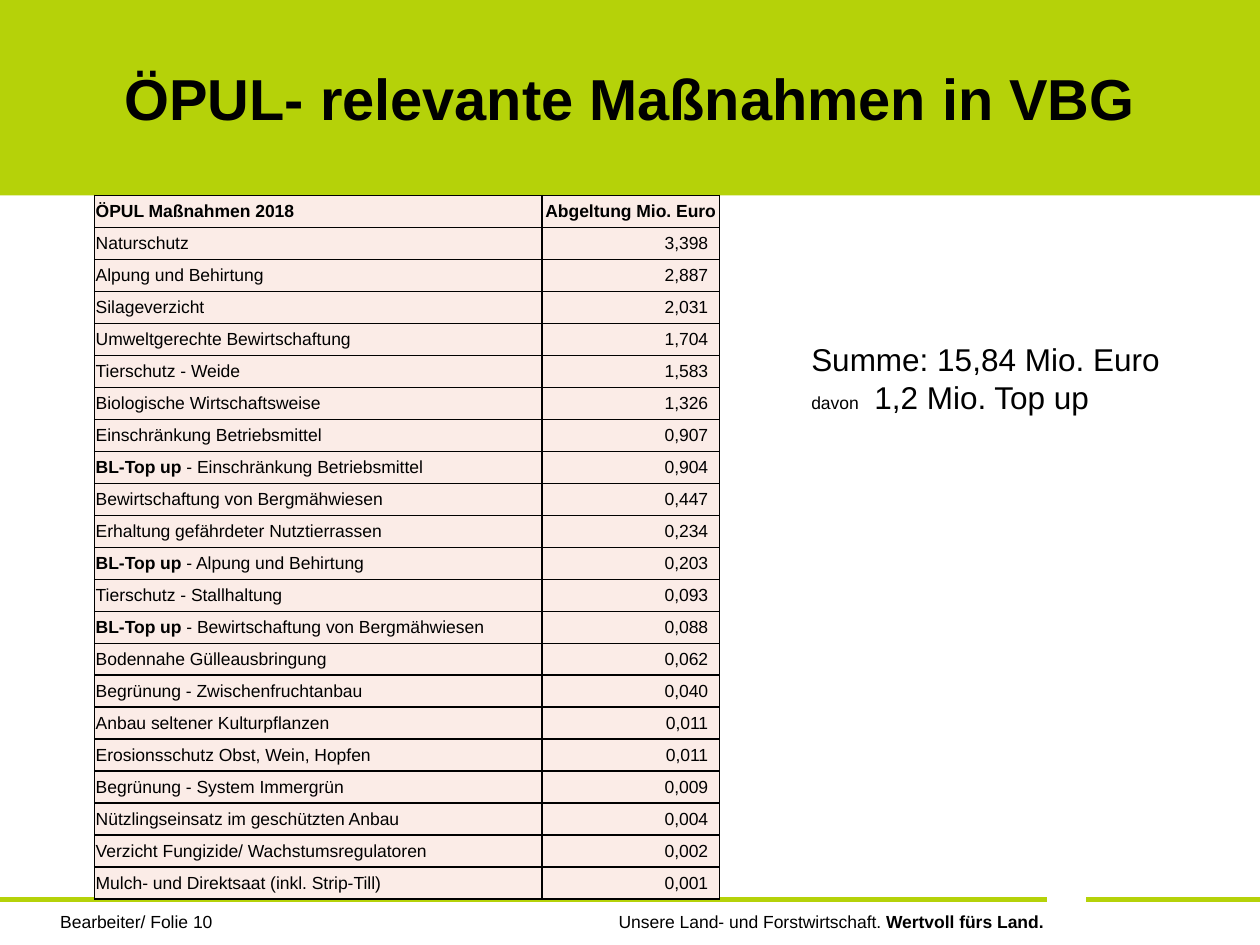
from dataclasses import dataclass

from lxml.etree import SubElement
from pptx import Presentation
from pptx.dml.color import RGBColor
from pptx.enum.shapes import MSO_CONNECTOR, MSO_SHAPE
from pptx.enum.text import MSO_ANCHOR, PP_ALIGN
from pptx.oxml.ns import qn
from pptx.slide import Slide
from pptx.util import Inches, Pt

TOP_UP = "BL-Top up "
HEADER = ("ÖPUL Maßnahmen 2018", "Abgeltung Mio. Euro")
MEASURES = [
    ("Naturschutz", "3,398"),
    ("Alpung und Behirtung", "2,887"),
    ("Silageverzicht", "2,031"),
    ("Umweltgerechte Bewirtschaftung", "1,704"),
    ("Tierschutz - Weide", "1,583"),
    ("Biologische Wirtschaftsweise", "1,326"),
    ("Einschränkung Betriebsmittel", "0,907"),
    (TOP_UP + "- Einschränkung Betriebsmittel", "0,904"),
    ("Bewirtschaftung von Bergmähwiesen", "0,447"),
    ("Erhaltung gefährdeter Nutztierrassen", "0,234"),
    (TOP_UP + "- Alpung und Behirtung", "0,203"),
    ("Tierschutz - Stallhaltung", "0,093"),
    (TOP_UP + "- Bewirtschaftung von Bergmähwiesen", "0,088"),
    ("Bodennahe Gülleausbringung", "0,062"),
    ("Begrünung - Zwischenfruchtanbau", "0,040"),
    ("Anbau seltener Kulturpflanzen", "0,011"),
    ("Erosionsschutz Obst, Wein, Hopfen", "0,011"),
    ("Begrünung - System Immergrün", "0,009"),
    ("Nützlingseinsatz im geschützten Anbau", "0,004"),
    ("Verzicht Fungizide/ Wachstumsregulatoren", "0,002"),
    ("Mulch- und Direktsaat (inkl. Strip-Till)", "0,001"),
]


def color(value):
    return RGBColor.from_string(value)


def measure_spans(name):
    if name.startswith(TOP_UP):
        return [(TOP_UP, 10, True), (name.removeprefix(TOP_UP), 10, False)]
    return [(name, 10, False)]


@dataclass
class SlideBuilder:
    page: Slide
    font: str = "Arial"
    ink: str = "000000"
    green: str = "B5D209"
    cell_fill: str = "FBECE7"

    def add_paragraphs(self, frame, paragraphs, align=PP_ALIGN.LEFT):
        for index, spans in enumerate(paragraphs):
            para = frame.add_paragraph() if index else frame.paragraphs[0]
            para.alignment = align
            for text, size, bold in spans:
                span = para.add_run()
                span.text = text
                span.font.name = self.font
                span.font.size = Pt(size)
                span.font.bold = bold
                span.font.color.rgb = color(self.ink)

    def text(self, left, top, width, height, paragraphs, align=PP_ALIGN.LEFT, wrap=True):
        box = self.page.shapes.add_textbox(
            Inches(left), Inches(top), Inches(width), Inches(height))
        box.text_frame.word_wrap = wrap
        self.add_paragraphs(box.text_frame, paragraphs, align)

    def banner(self, height, title):
        shape = self.page.shapes.add_shape(
            MSO_SHAPE.RECTANGLE, 0, 0, Inches(10), Inches(height))
        shape.shadow.inherit = False
        shape.fill.solid()
        shape.fill.fore_color.rgb = color(self.green)
        shape.line.fill.background()
        shape.text_frame.word_wrap = True
        shape.text_frame.vertical_anchor = MSO_ANCHOR.MIDDLE
        self.add_paragraphs(shape.text_frame, [[(title, 33, True)]], PP_ALIGN.CENTER)

    def rule(self, start, end, top):
        line = self.page.shapes.add_connector(
            MSO_CONNECTOR.STRAIGHT, Inches(start), Inches(top), Inches(end), Inches(top))
        line.line.color.rgb = color(self.green)
        line.line.width = Pt(2.5)
        SubElement(line._element.spPr, qn("a:effectLst"))

    def cell(self, cell, spans, align, right_margin=0.01):
        cell.margin_left = cell.margin_top = Inches(0.01)
        cell.margin_right = Inches(right_margin)
        cell.margin_bottom = 0
        cell.vertical_anchor = MSO_ANCHOR.MIDDLE
        self.add_paragraphs(cell.text_frame, [spans], align)
        properties = cell._tc.get_or_add_tcPr()
        for side in ("a:lnL", "a:lnR", "a:lnT", "a:lnB"):
            border = SubElement(properties, qn(side), w=str(Pt(1)))
            fill = SubElement(border, qn("a:solidFill"))
            SubElement(fill, qn("a:srgbClr"), val=self.ink)
        cell.fill.solid()
        cell.fill.fore_color.rgb = color(self.cell_fill)

    def table(self, left, top, widths, height, header, rows):
        count = len(rows) + 1
        table = self.page.shapes.add_table(
            count, len(widths), Inches(left), Inches(top),
            Inches(sum(widths)), Inches(height)).table
        for column, width in zip(table.columns, widths):
            column.width = Inches(width)
        for row in table.rows:
            row.height = Inches(height / count)
        for index, align in enumerate((PP_ALIGN.LEFT, PP_ALIGN.CENTER)):
            self.cell(table.cell(0, index), [(header[index], 10, True)], align)
        for index, (name, amount) in enumerate(rows, 1):
            self.cell(table.cell(index, 0), measure_spans(name), PP_ALIGN.LEFT)
            self.cell(table.cell(index, 1), [(amount, 10, False)], PP_ALIGN.RIGHT, 0.09)


def main():
    deck = Presentation()
    deck.slide_width, deck.slide_height = Inches(10), Inches(7.5)
    builder = SlideBuilder(deck.slides.add_slide(deck.slide_layouts[6]))
    builder.text(0.38, 7.18, 2.33, 0.4, [[("Bearbeiter/ Folie 10", 10, False)]])
    builder.text(2.59, 7.18, 5.79, 0.4, [[
        ("Unsere Land- und Forstwirtschaft. ", 10, False),
        ("Wertvoll fürs Land.", 10, True),
    ]], PP_ALIGN.RIGHT)
    builder.rule(0, 8.31, 7.14)
    builder.rule(8.62, 10, 7.14)
    builder.banner(1.55, "ÖPUL- relevante Maßnahmen in VBG")
    builder.table(0.75, 1.55, (3.55, 1.41), 5.59, HEADER, MEASURES)
    builder.text(6.34, 2.65, 2.99, 0.71, [
        [("Summe: 15,84 Mio. Euro", 18, False)],
        [("davon", 10, False), ("\t1,2 Mio. Top up", 18, False)],
    ], wrap=False)
    deck.save("out.pptx")


if __name__ == "__main__":
    main()
